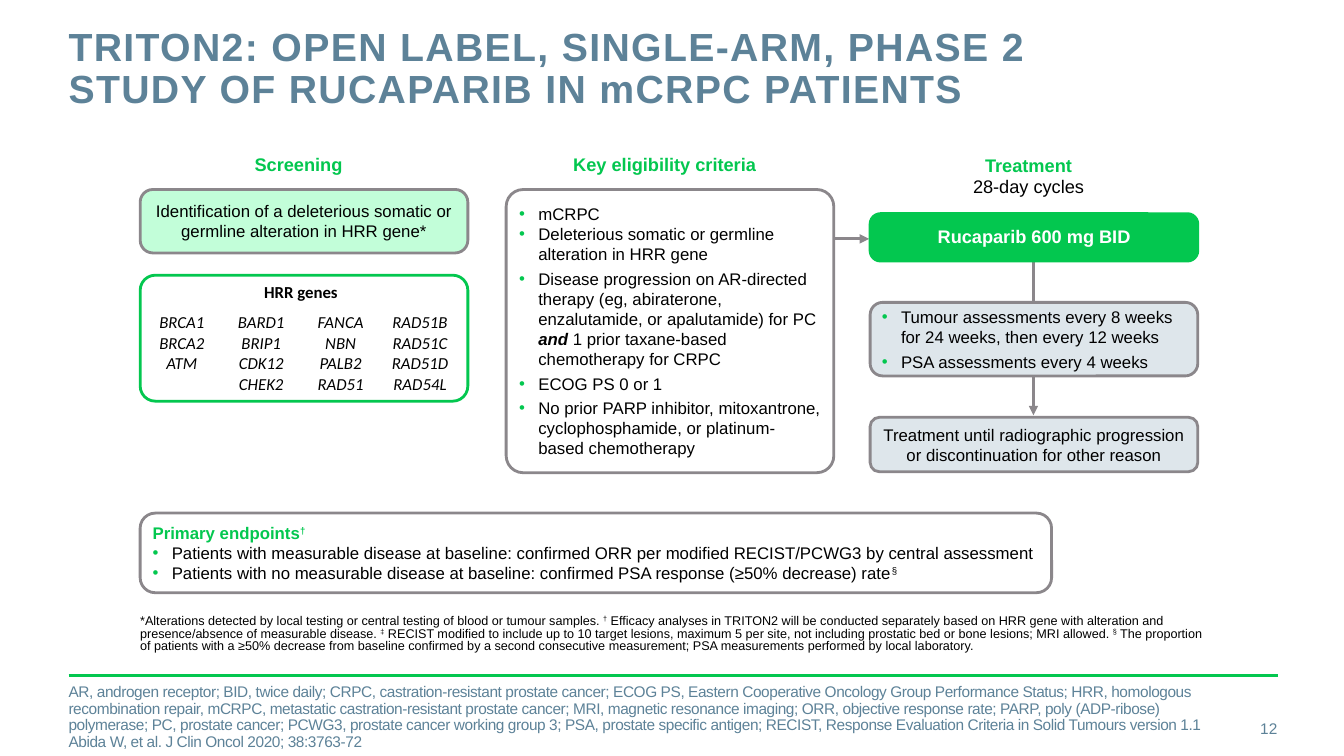
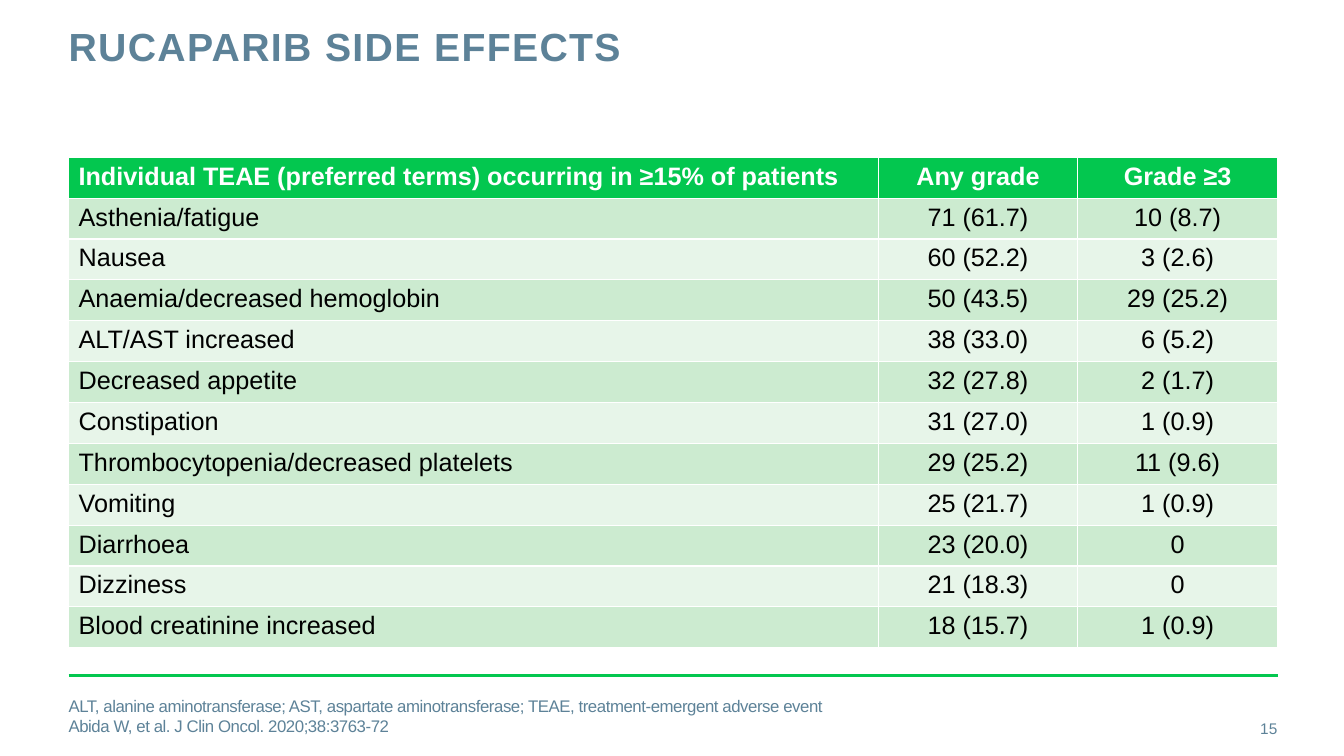
from pptx import Presentation
from pptx.dml.color import RGBColor
from pptx.enum.shapes import MSO_CONNECTOR, MSO_SHAPE
from pptx.enum.text import MSO_ANCHOR as ANCHOR, MSO_AUTO_SIZE, PP_ALIGN as ALIGN
from pptx.oxml.ns import qn
from pptx.util import Inches, Pt
from lxml.etree import SubElement

rgb = RGBColor.from_string
GREEN, SLATE, GREY = "03C74F", "5D8298", "8B878B"
PALE_GREEN, PALE_BLUE = "C2FED9", "DEE6EB"
BLACK, WHITE = "000000", "FFFFFF"
BAND_COLORS = ["CCEBD0", "E7F5E9"]
LEFT, RIGHT = 0.68, 12.68
BOX_INSETS = (0.08, 0.05, 0.08, 0.05)
HEADING_INSETS = (0, 0.05, 0.1, 0.05)


def write(frame, paragraphs, size, color=BLACK, bold=False, italic=False, font="Arial",
          align=ALIGN.LEFT, anchor=ANCHOR.MIDDLE, insets=(0, 0, 0, 0), line_spacing=None,
          space_after=0, tracking=0, heading=False, bullets=False):
    """Fill a frame; a paragraph is a string or a list of strings and (string, mark) runs.

    heading makes the first paragraph bold green; bullets go on all the others.
    """
    frame.word_wrap = True
    frame.auto_size = MSO_AUTO_SIZE.NONE
    frame.vertical_anchor = anchor
    (frame.margin_left, frame.margin_top,
     frame.margin_right, frame.margin_bottom) = map(Inches, insets)
    for index, content in enumerate(paragraphs):
        paragraph = frame.add_paragraph() if index else frame.paragraphs[0]
        is_heading = heading and index == 0
        if bullets and not is_heading:
            properties = paragraph._p.get_or_add_pPr()
            properties.set("marL", str(Inches(0.19)))
            properties.set("indent", str(-Inches(0.19)))
            bullet_color = SubElement(properties, qn("a:buClr"))
            SubElement(bullet_color, qn("a:srgbClr"), val=GREEN)
            SubElement(properties, qn("a:buFont"), typeface="Arial")
            SubElement(properties, qn("a:buChar"), char="•")
        paragraph.alignment = align
        paragraph.space_before = Pt(0)
        paragraph.space_after = Pt(space_after)
        if line_spacing:
            paragraph.line_spacing = line_spacing
        for part in [content] if isinstance(content, str) else content:
            text, mark = (part, "") if isinstance(part, str) else part
            run = paragraph.add_run()
            run.text = text
            run.font.name = font
            run.font.size = Pt(size)
            run.font.bold = bold or is_heading or mark == "strong"
            run.font.italic = italic or mark == "strong"
            run.font.color.rgb = rgb(GREEN if is_heading else color)
            run_properties = run._r.get_or_add_rPr()
            if tracking:
                run_properties.set("spc", str(round(tracking * 100)))
            if mark == "superscript":
                run_properties.set("baseline", "30000")


def add_box(slide, at, rounding, fill=None, line=GREY):
    box = slide.shapes.add_shape(MSO_SHAPE.ROUNDED_RECTANGLE, *map(Inches, at))
    box.adjustments[0] = rounding
    box.shadow.inherit = False
    if fill:
        box.fill.solid()
        box.fill.fore_color.rgb = rgb(fill)
    else:
        box.fill.background()
    box.line.color.rgb = rgb(line)
    box.line.width = Pt(2)
    return box.text_frame


presentation = Presentation()
presentation.slide_width = Inches(13.33)
presentation.slide_height = Inches(7.5)

# Shared frame: title, rule, arrows, references and page number
rule = (LEFT, 6.7, RIGHT, 6.7, GREEN, 2, False)
arrows = [
    (10.25, 2.24, 10.25, 4.12, GREY, 2.25, True),
    (8.05, 2.37, 8.62, 2.37, GREY, 2.25, True),
]
pages = [
    ("TRITON2: OPEN LABEL, SINGLE-ARM, PHASE 2 STUDY OF RUCAPARIB IN mCRPC PATIENTS",
     "12", [rule] + arrows, (LEFT, 6.92, 11.42, 0.4), 11, 0.9,
     ["AR, androgen receptor; BID, twice daily; CRPC, castration-resistant prostate cancer; "
      "ECOG PS, Eastern Cooperative Oncology Group Performance Status; HRR, homologous "
      "recombination repair, mCRPC, metastatic castration-resistant prostate cancer; MRI, "
      "magnetic resonance imaging; ORR, objective response rate; PARP, poly (ADP-ribose) "
      "polymerase; PC, prostate cancer; PCWG3, prostate cancer working group 3; PSA, prostate "
      "specific antigen; RECIST, Response Evaluation Criteria in Solid Tumours version 1.1",
      "Abida W, et al. J Clin Oncol 2020; 38:3763-72"]),
    ("RUCAPARIB SIDE EFFECTS",
     "15", [rule], (LEFT, 6.9, 8.88, 0.4), 12, None,
     ["ALT, alanine aminotransferase; AST, aspartate aminotransferase; TEAE, "
      "treatment-emergent adverse event",
      "Abida W, et al. J Clin Oncol. 2020;38:3763-72"]),
]
slides = []
for title_text, number, lines, notes_at, notes_size, notes_spacing, references in pages:
    slide = presentation.slides.add_slide(presentation.slide_layouts[5])
    slides.append(slide)
    title = slide.shapes.title
    title.left, title.top, title.width, title.height = map(Inches, (LEFT, 0.27, 9.56, 0.88))
    write(title.text_frame, [title_text], 28, SLATE, bold=True, anchor=ANCHOR.TOP,
          line_spacing=Pt(30), tracking=1)
    for x1, y1, x2, y2, color, width, has_arrowhead in lines:
        connector = slide.shapes.add_connector(
            MSO_CONNECTOR.STRAIGHT, *map(Inches, (x1, y1, x2, y2)))
        connector.line.color.rgb = rgb(color)
        connector.line.width = Pt(width)
        shape_properties = connector._element.spPr
        if has_arrowhead:
            SubElement(shape_properties.get_or_add_ln(), qn("a:tailEnd"), type="triangle")
        SubElement(shape_properties, qn("a:effectLst"))
    notes = slide.shapes.add_textbox(*map(Inches, notes_at))
    write(notes.text_frame, references, notes_size, SLATE,
          line_spacing=notes_spacing, tracking=-0.3)
    page_number = slide.shapes.add_textbox(*map(Inches, (11.81, 7.03, 0.86, 0.4)))
    write(page_number.text_frame, [number], 11, SLATE, align=ALIGN.RIGHT)
design_slide, effects_slide = slides

# Study design: column headings
for left, width, height, heading_lines in [
    (1.81, 2.4, 0.32, ["Screening"]),
    (5.44, 2.4, 0.32, ["Key eligibility criteria"]),
    (9.3, 1.9, 0.54, ["Treatment", "28-day cycles"]),
]:
    column_heading = design_slide.shapes.add_textbox(
        *map(Inches, (left, 1.47, width, height)))
    write(column_heading.text_frame, heading_lines, 13, align=ALIGN.CENTER,
          anchor=ANCHOR.BOTTOM, insets=HEADING_INSETS, heading=True)

# Study design: boxes
SCREENING, ELIGIBILITY, TREATMENT, COLUMN_WIDTH = 1.39, 5.02, 8.63, 3.25

identification = add_box(design_slide, (SCREENING, 1.88, COLUMN_WIDTH, 0.63), 0.2, PALE_GREEN)
write(identification,
      ["Identification of a deleterious somatic or germline alteration in HRR gene*"],
      12, align=ALIGN.CENTER, insets=BOX_INSETS)

eligibility = add_box(design_slide, (ELIGIBILITY, 1.88, COLUMN_WIDTH, 2.81), 0.06, WHITE)
write(eligibility, [
    "mCRPC",
    "Deleterious somatic or germline alteration in HRR gene",
    ["Disease progression on AR-directed therapy (eg, abiraterone, enzalutamide, or "
     "apalutamide) for PC ", ("and", "strong"), " 1 prior taxane-based chemotherapy for CRPC"],
    "ECOG PS 0 or 1",
    "No prior PARP inhibitor, mitoxantrone, cyclophosphamide, or platinum-based chemotherapy",
], 12, insets=BOX_INSETS, space_after=3, bullets=True)
eligibility.paragraphs[0].space_after = Pt(0)

dose = add_box(design_slide, (TREATMENT, 2.12, COLUMN_WIDTH, 0.47), 0.22, GREEN, GREEN)
write(dose, ["Rucaparib 600 mg BID"], 13, WHITE, bold=True, align=ALIGN.CENTER,
      insets=(0, 0.05, 0, 0.05), line_spacing=0.9)

assessments = add_box(design_slide, (TREATMENT, 3, COLUMN_WIDTH, 0.73), 0.17, PALE_BLUE)
write(assessments, ["Tumour assessments every 8 weeks for 24 weeks, then every 12 weeks",
                    "PSA assessments every 4 weeks"],
      12, insets=BOX_INSETS, space_after=3, bullets=True)

duration = add_box(design_slide, (TREATMENT, 4.14, COLUMN_WIDTH, 0.54), 0.17, PALE_BLUE)
write(duration,
      ["Treatment until radiographic progression or discontinuation for other reason"],
      12, align=ALIGN.CENTER, insets=BOX_INSETS, space_after=3)

endpoints = add_box(design_slide, (SCREENING, 5.09, 9.04, 0.79), 0.19, WHITE)
write(endpoints, [
    ["Primary endpoints", ("†", "superscript")],
    "Patients with measurable disease at baseline: confirmed ORR per modified RECIST/PCWG3 "
    "by central assessment",
    ["Patients with no measurable disease at baseline: confirmed PSA response "
     "(≥50% decrease) rate", ("§", "superscript")],
], 12, insets=BOX_INSETS, heading=True, bullets=True)

footnote = design_slide.shapes.add_textbox(*map(Inches, (SCREENING, 6.1, 10.65, 0.39)))
write(footnote.text_frame, [[
    "*Alterations detected by local testing or central testing of blood or tumour samples. ",
    ("†", "superscript"),
    " Efficacy analyses in TRITON2 will be conducted separately based on HRR gene with "
    "alteration and presence/absence of measurable disease. ",
    ("‡", "superscript"),
    " RECIST modified to include up to 10 target lesions, maximum 5 per site, not including "
    "prostatic bed or bone lesions; MRI allowed. ",
    ("§", "superscript"),
    " The proportion of patients with a ≥50% decrease from baseline confirmed by a second "
    "consecutive measurement; PSA measurements performed by local laboratory.",
]], 9, anchor=ANCHOR.TOP, line_spacing=0.85)

# Study design: gene table inside its green outline
gene_columns = [
    ["BRCA1", "BRCA2", "ATM"],
    ["BARD1", "BRIP1", "CDK12", "CHEK2"],
    ["FANCA", "NBN", "PALB2", "RAD51"],
    ["RAD51B", "RAD51C", "RAD51D", "RAD54L"],
]
gene_table = design_slide.shapes.add_table(
    2, len(gene_columns), *map(Inches, (1.41, 2.75, 3.15, 1.2))).table
gene_table.first_row = gene_table.horz_banding = False
gene_table.rows[0].height = Inches(0.3)
gene_table.rows[1].height = Inches(0.9)
for cell in gene_table.iter_cells():
    cell.fill.background()
gene_table.cell(0, 0).merge(gene_table.cell(0, len(gene_columns) - 1))
write(gene_table.cell(0, 0).text_frame, ["HRR genes"], 12, bold=True, font="Calibri",
      align=ALIGN.CENTER, anchor=ANCHOR.TOP, insets=(0.1, 0.05, 0.1, 0.05))
for column, genes in enumerate(gene_columns):
    write(gene_table.cell(1, column).text_frame, genes, 12, italic=True, font="Calibri",
          align=ALIGN.CENTER, anchor=ANCHOR.TOP, insets=(0.1, 0.05, 0.1, 0.05))
add_box(design_slide, (SCREENING, 2.73, COLUMN_WIDTH, 1.25), 0.12, line=GREEN)

# Side effects table
effect_rows = [
    ("Individual TEAE (preferred terms) occurring in ≥15% of patients", "Any grade", "Grade ≥3"),
    ("Asthenia/fatigue", "71 (61.7)", "10 (8.7)"),
    ("Nausea", "60 (52.2)", "3 (2.6)"),
    ("Anaemia/decreased hemoglobin", "50 (43.5)", "29 (25.2)"),
    ("ALT/AST increased", "38 (33.0)", "6 (5.2)"),
    ("Decreased appetite", "32 (27.8)", "2 (1.7)"),
    ("Constipation", "31 (27.0)", "1 (0.9)"),
    ("Thrombocytopenia/decreased platelets", "29 (25.2)", "11 (9.6)"),
    ("Vomiting", "25 (21.7)", "1 (0.9)"),
    ("Diarrhoea", "23 (20.0)", "0"),
    ("Dizziness", "21 (18.3)", "0"),
    ("Blood creatinine increased", "18 (15.7)", "1 (0.9)"),
]
effects_table = effects_slide.shapes.add_table(
    len(effect_rows), 3, *map(Inches, (LEFT, 1.56, 11.99, 4.87))).table
for column, width in zip(effects_table.columns, (8.03, 1.98, 1.98)):
    column.width = Inches(width)
for row, values in enumerate(effect_rows):
    is_header = row == 0
    for column, value in enumerate(values):
        cell = effects_table.cell(row, column)
        cell.fill.solid()
        cell.fill.fore_color.rgb = rgb(GREEN if is_header else BAND_COLORS[(row - 1) % 2])
        cell.text_frame.text = value
        paragraph = cell.text_frame.paragraphs[0]
        paragraph.alignment = ALIGN.CENTER if column else ALIGN.LEFT
        font = paragraph.runs[0].font
        font.name = "Arial"
        font.size = Pt(18)
        font.bold = is_header
        font.color.rgb = rgb(WHITE if is_header else BLACK)

presentation.save("out.pptx")
